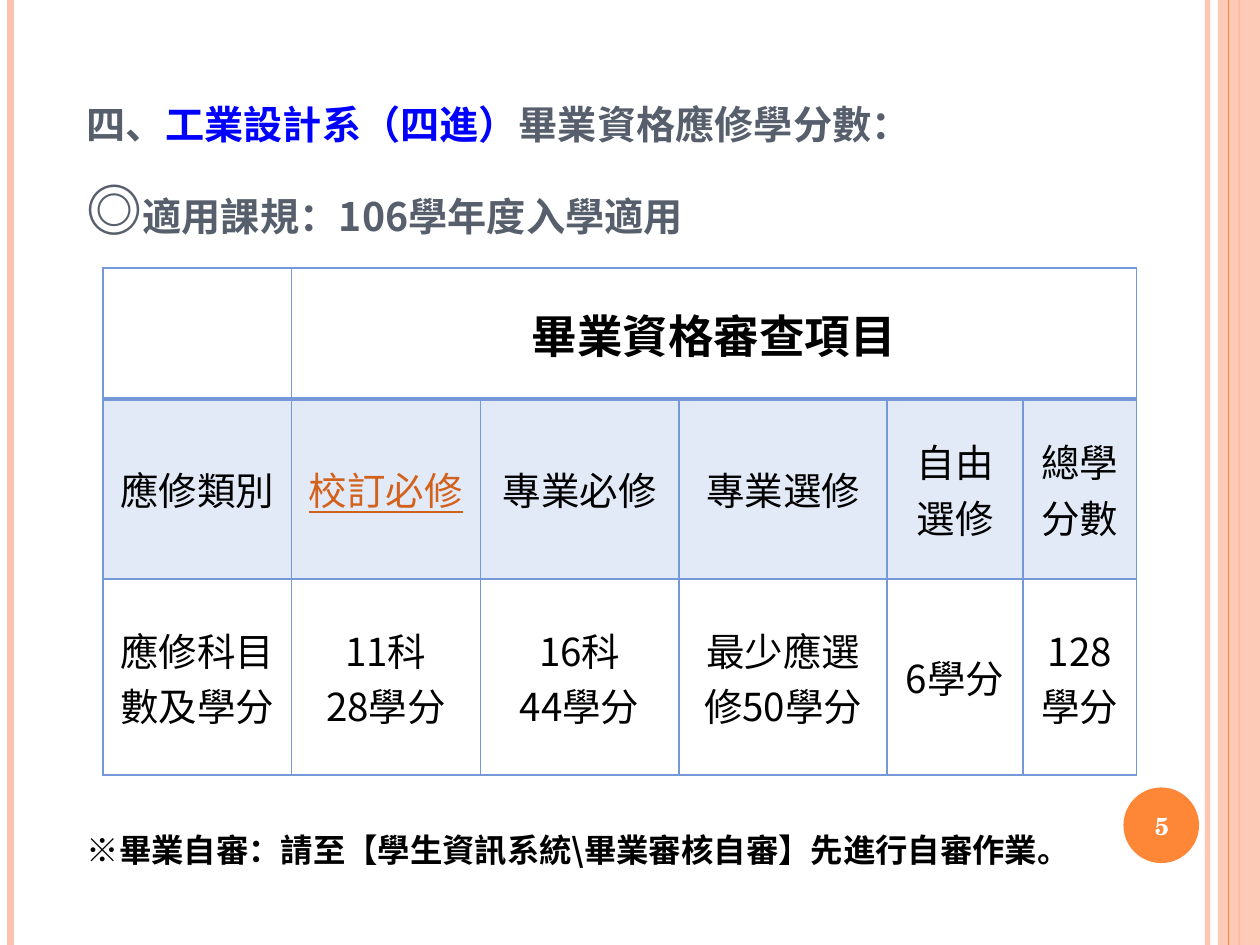
import pptx
import pptx.util
import pptx.dml.color
import pptx.enum.shapes
import pptx.enum.text
import pptx.oxml.ns
from lxml import etree

Pt = pptx.util.Pt
RGB = pptx.dml.color.RGBColor
ANCHOR = pptx.enum.text.MSO_ANCHOR
CENTER = pptx.enum.text.PP_ALIGN.CENTER
SHAPES = pptx.enum.shapes.MSO_SHAPE
qn = pptx.oxml.ns.qn

PEACH = RGB(0xFE, 0xC3, 0xAE)
ORANGE = RGB(0xFE, 0x86, 0x37)
SLATE = RGB(0x57, 0x5F, 0x6D)
BLUE = RGB(0x00, 0x00, 0xFF)
TABLE_BLUE = RGB(0x75, 0x98, 0xD9)
LINK = RGB(0xD2, 0x61, 0x1C)
BLACK = RGB(0, 0, 0)
WHITE = RGB(0xFF, 0xFF, 0xFF)

SANS = "Noto Sans CJK SC"
SYMBOL = "Noto Sans CJK JP"
SERIF = "TeX Gyre Schola"

WIDTH, HEIGHT = 720, 540

# text, size, font, colour; "\v" breaks the line
TITLE = [
    ("四、", 28, SANS, SLATE),
    ("工業設計系（四進）", 28, SANS, BLUE),
    ("畢業資格應修學分數：\v", 28, SANS, SLATE),
    ("◎", 40, SYMBOL, SLATE),
    ("適用課規：106學年度入學適用", 28, SANS, SLATE),
]
PAGE_NUMBER = "5"
NOTE = "※畢業自審：請至【學生資訊系統\\畢業審核自審】先進行自審作業。"

HEADING = "畢業資格審查項目"
LINKED = "校訂必修"
CREDITS = [
    ["", HEADING, "", "", "", ""],
    ["應修類別", LINKED, "專業必修", "專業選修", "自由\n選修", "總學\n分數"],
    ["應修科目數及學分", "11科\n28學分", "16科\n44學分", "最少應選修50學分",
     "6學分", "128\v學分"],
]
COLUMN_WIDTHS = [107.5, 108, 113.5, 119, 77.5, 65]
ROW_HEIGHTS = [75, 103, 112]

# x, colour, width, opacity in percent
LINES_BEHIND = [(690, PEACH, 3, 93), (6, PEACH, 4.5, 100), (708, ORANGE, 1.5, 100)]
LINES_FRONT = [(702, ORANGE, 0.75, 100)]


def set_opacity(parent, percent):
    if percent < 100:
        colour = next(parent.iter(qn("a:srgbClr")))
        etree.SubElement(colour, qn("a:alpha"), val=str(percent * 1000))


def style_run(run, size, font, colour, bold=True):
    run.font.size = Pt(size)
    run.font.bold = bold
    run.font.color.rgb = colour
    run.font.name = font
    etree.SubElement(run.font._element, qn("a:ea"), typeface=font)


def add_vertical_lines(shapes, lines):
    for x, colour, width, opacity in lines:
        rule = shapes.add_connector(pptx.enum.shapes.MSO_CONNECTOR.STRAIGHT,
                                    Pt(x), 0, Pt(x), Pt(HEIGHT))
        rule.line.color.rgb = colour
        rule.line.width = Pt(width)
        properties = rule._element.spPr
        set_opacity(properties, opacity)
        etree.SubElement(properties, qn("a:effectLst"))


def add_filled(shapes, kind, box, colour, opacity=100):
    shape = shapes.add_shape(kind, *map(Pt, box))
    shape.shadow.inherit = False
    shape.fill.solid()
    shape.fill.fore_color.rgb = colour
    set_opacity(shape._element.spPr, opacity)
    shape.line.fill.background()


def add_text(shapes, box, anchor, pieces):
    """Add a wrapping one-paragraph text box and return its paragraph."""
    frame = shapes.add_textbox(*map(Pt, box)).text_frame
    frame.word_wrap = True
    frame.vertical_anchor = anchor
    paragraph = frame.paragraphs[0]
    for text, size, font, colour in pieces:
        run = paragraph.add_run()
        run.text = text.rstrip("\v")
        style_run(run, size, font, colour)
        if text.endswith("\v"):
            paragraph.add_line_break()
    return paragraph


def set_borders(cell, widths):
    """Draw the left, right, top and bottom borders in the given widths."""
    properties = cell._tc.get_or_add_tcPr()
    for side, width in zip("LRTB", widths):
        line = etree.SubElement(properties, qn("a:ln" + side), w=str(Pt(width)))
        fill = etree.SubElement(line, qn("a:solidFill"))
        etree.SubElement(fill, qn("a:srgbClr"), val=str(TABLE_BLUE))


def fill_cell(cell, row, column, text):
    set_borders(cell, (1, 1, 2 if row == 1 else 1, 2 if row == 0 else 1))
    if row == 1:
        cell.fill.solid()
        cell.fill.fore_color.rgb = TABLE_BLUE
        set_opacity(cell._tc.tcPr.find(qn("a:solidFill")), 20)
    else:
        cell.fill.background()
    cell.vertical_anchor = ANCHOR.MIDDLE
    if row > 0 and column == len(COLUMN_WIDTHS) - 1:
        cell.margin_left = cell.margin_right = 0
        cell.margin_top = cell.margin_bottom = 0
    if not text:
        return
    cell.text_frame.text = text
    heading = text == HEADING
    for paragraph in cell.text_frame.paragraphs:
        paragraph.alignment = CENTER
        for run in paragraph.runs:
            style_run(run, 26 if heading else 22, SANS,
                      LINK if text == LINKED else BLACK, heading)
            run.font.underline = text == LINKED


def add_credit_table(shapes):
    frame = shapes.add_table(len(ROW_HEIGHTS), len(COLUMN_WIDTHS), Pt(59), Pt(153),
                             Pt(sum(COLUMN_WIDTHS)), Pt(sum(ROW_HEIGHTS)))
    table = frame.table
    for column, width in zip(table.columns, COLUMN_WIDTHS):
        column.width = Pt(width)
    for row, height in zip(table.rows, ROW_HEIGHTS):
        row.height = Pt(height)
    table.cell(0, 1).merge(table.cell(0, len(COLUMN_WIDTHS) - 1))
    for r, texts in enumerate(CREDITS):
        for c, text in enumerate(texts):
            fill_cell(table.cell(r, c), r, c, text)


def main():
    deck = pptx.Presentation()
    deck.slide_width, deck.slide_height = Pt(WIDTH), Pt(HEIGHT)
    shapes = deck.slides.add_slide(deck.slide_layouts[6]).shapes

    add_vertical_lines(shapes, LINES_BEHIND)
    add_filled(shapes, SHAPES.RECTANGLE, (696, 0, 24, HEIGHT), PEACH, 87)
    add_vertical_lines(shapes, LINES_FRONT)
    add_filled(shapes, SHAPES.OVAL, (642, 450, 43.2, 43.2), ORANGE)

    title = add_text(shapes, (42.5, 26, 623.5, 118), ANCHOR.BOTTOM, TITLE)
    title.line_spacing = Pt(55)
    title.space_before = Pt(6)
    for run in title.runs:
        run.font._element.set("cap", "small")

    number = add_text(shapes, (640, 451.5, 48, 41), ANCHOR.MIDDLE,
                      [(PAGE_NUMBER, 14, SERIF, WHITE)])
    number.alignment = CENTER
    add_text(shapes, (42.5, 468.5, 601, 34), ANCHOR.MIDDLE,
             [(NOTE, 18.5, SANS, BLACK)])
    add_credit_table(shapes)
    deck.save("out.pptx")


if __name__ == "__main__":
    main()
